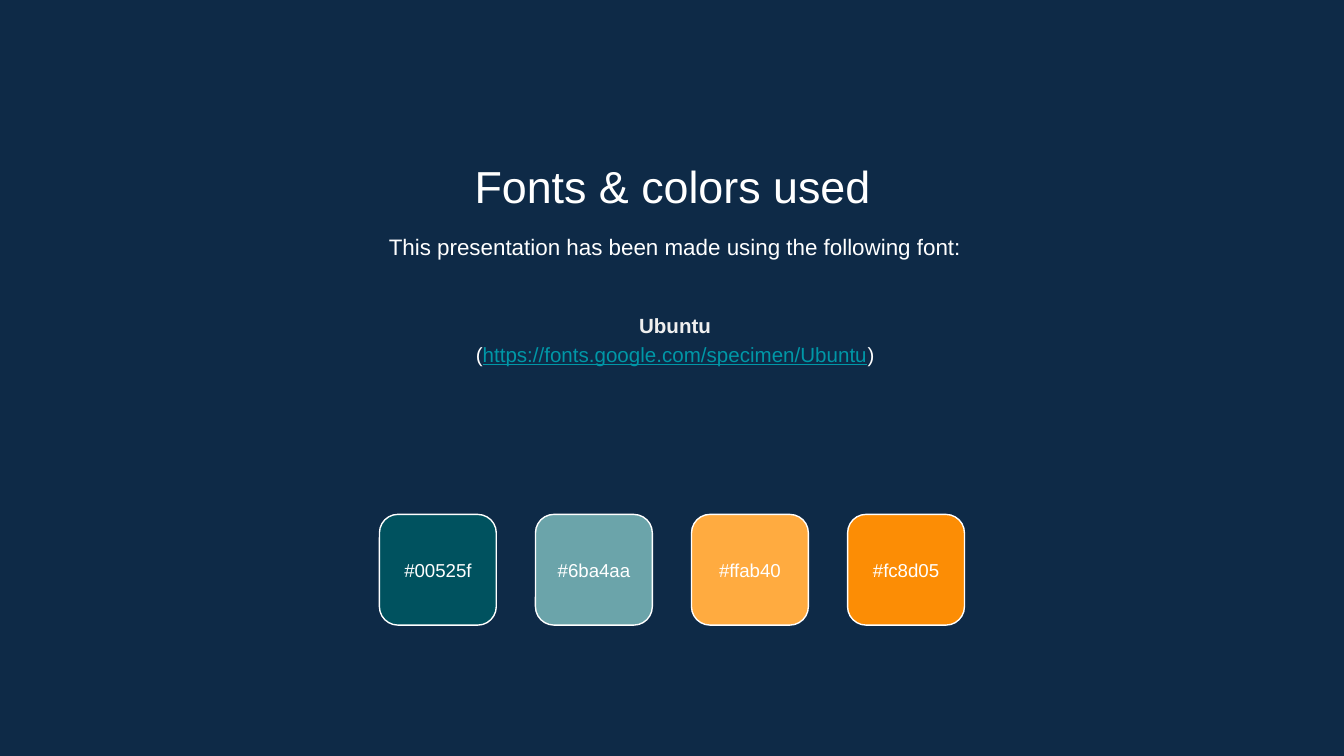
from lxml import etree
from pptx import Presentation
from pptx.dml.color import RGBColor
from pptx.enum import shapes, text
from pptx.oxml.ns import qn
from pptx.util import Pt

FONT = "Arial"
WHITE = "FFFFFF"


def color(value):
    return RGBColor.from_string(value.upper())


def add_line(para, spans, size, spacing=1.0):
    """Fill a centred paragraph with (wording, colour, bold, underline) spans."""
    properties = para._p.get_or_add_pPr()
    properties.set("marL", "0")
    properties.set("indent", "0")
    etree.SubElement(properties, qn("a:buNone"))
    para.alignment = text.PP_ALIGN.CENTER
    para.line_spacing = spacing
    para.space_before = Pt(0)
    for wording, shade, bold, underline in spans:
        span = para.add_run()
        span.text = wording
        span.font.name = FONT
        span.font.size = Pt(size)
        span.font.bold = bold
        span.font.underline = underline
        span.font.color.rgb = color(shade)


deck = Presentation()
deck.slide_width, deck.slide_height = Pt(720), Pt(405)
page = deck.slides.add_slide(deck.slide_layouts.get_by_name("Two Content"))
page.background.fill.solid()
page.background.fill.fore_color.rgb = color("0E2A47")

title, intro, font_note = list(page.placeholders)[:3]
top, middle = text.MSO_ANCHOR.TOP, text.MSO_ANCHOR.MIDDLE

# Placeholder, left, top, height, anchor, top inset, bottom inset, size, spacing, lines
blocks = [
    (title, 82.8, 74.9, 38.2, top, 10, 7.2, 24, 1.0,
     [[("Fonts & colors used", WHITE, False, False)]]),
    (intro, 84.2, 114.5, 34.6, top, 8.5, 7.2, 12, 1.15,
     [[("This presentation has been made using the following font:", WHITE, False, False)]]),
    (font_note, 84.2, 151.2, 74.2, middle, 7.2, 21.7, 11, 1.15,
     [[("Ubuntu", "EFEFEF", True, False)],
      [("(", WHITE, False, False),
       ("https://fonts.google.com/specimen/Ubuntu", "0097A7", False, True),
       (")", WHITE, False, False)]]),
]
for box, left, y, height, anchor, inset_top, inset_bottom, size, spacing, lines in blocks:
    box.left, box.top, box.width, box.height = Pt(left), Pt(y), Pt(555), Pt(height)
    frame = box.text_frame
    frame.auto_size = text.MSO_AUTO_SIZE.NONE
    frame.word_wrap = True
    frame.vertical_anchor = anchor
    frame.margin_left = frame.margin_right = Pt(7.2)
    frame.margin_top, frame.margin_bottom = Pt(inset_top), Pt(inset_bottom)
    for index, spans in enumerate(lines):
        para = frame.add_paragraph() if index else frame.paragraphs[0]
        add_line(para, spans, size, spacing)

# Palette: four labelled swatches, centred on the page
swatch_colors = ["#00525f", "#6ba4aa", "#ffab40", "#fc8d05"]
swatch_width, swatch_height, pitch = 62.6, 59.3, 83.6
first_left = (720 - 3 * pitch - swatch_width) / 2
for index, label in enumerate(swatch_colors):
    swatch = page.shapes.add_shape(
        shapes.MSO_SHAPE.ROUNDED_RECTANGLE,
        Pt(first_left + index * pitch), Pt(275.6), Pt(swatch_width), Pt(swatch_height))
    swatch.shadow.inherit = False
    swatch.fill.solid()
    swatch.fill.fore_color.rgb = color(label[1:])
    swatch.line.color.rgb = color(WHITE)
    swatch.line.width = Pt(0.75)
    swatch.text_frame.word_wrap = False
    swatch.text_frame.vertical_anchor = middle
    add_line(swatch.text_frame.paragraphs[0], [(label, WHITE, False, False)], 10)

deck.save("out.pptx")
